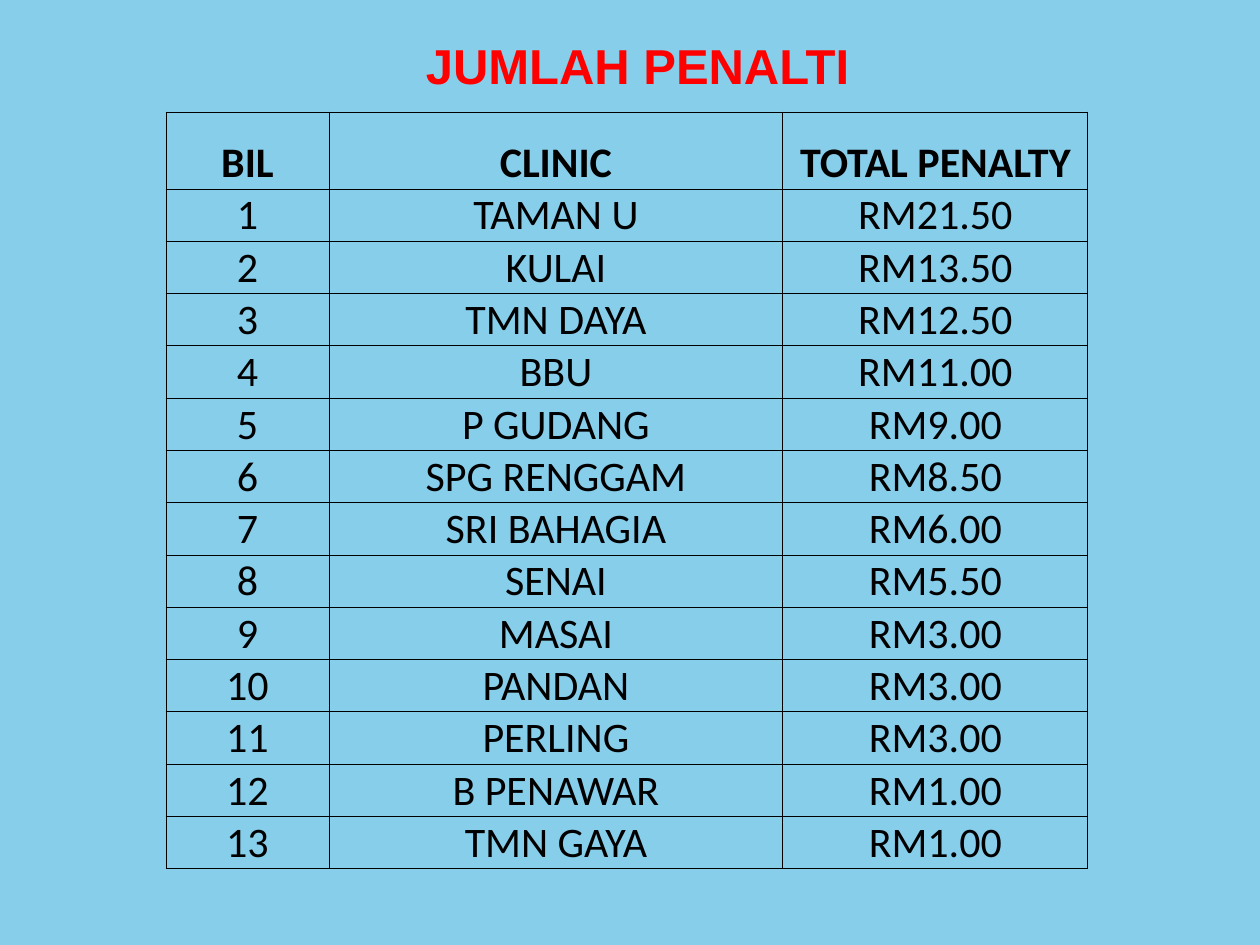
import pptx
import pptx.dml.color
import pptx.enum.text
import pptx.oxml
import pptx.oxml.ns
import pptx.util

PX = 914400 // 126
COLORS = {"sky": "87CEEB", "heading": "FF0000", "ink": "000000"}
HEADER = ("BIL", "CLINIC", "TOTAL PENALTY")
PENALTIES = (
    ("TAMAN U", "RM21.50"),
    ("KULAI", "RM13.50"),
    ("TMN DAYA", "RM12.50"),
    ("BBU", "RM11.00"),
    ("P GUDANG", "RM9.00"),
    ("SPG RENGGAM", "RM8.50"),
    ("SRI BAHAGIA", "RM6.00"),
    ("SENAI", "RM5.50"),
    ("MASAI", "RM3.00"),
    ("PANDAN", "RM3.00"),
    ("PERLING", "RM3.00"),
    ("B PENAWAR", "RM1.00"),
    ("TMN GAYA", "RM1.00"),
)
COLUMN_WIDTHS = (163, 454, 305)
HEADER_HEIGHT = 77


def px(length):
    """Convert px to EMU."""
    return pptx.util.Emu(length * PX)


def rgb(name):
    """Look up a named colour."""
    return pptx.dml.color.RGBColor.from_string(COLORS[name])


def format_text(frame, font_name, size, color, bold):
    """Centre the only paragraph of a frame and format its runs."""
    paragraph = frame.paragraphs[0]
    paragraph.alignment = pptx.enum.text.PP_ALIGN.CENTER
    for run in paragraph.runs:
        run.font.name = font_name
        run.font.size = pptx.util.Pt(size)
        run.font.bold = bold
        run.font.color.rgb = rgb(color)


def add_borders(cell):
    """Draw a thin line on each side of a cell."""
    properties = cell._tc.get_or_add_tcPr()
    for position, side in enumerate(("lnL", "lnR", "lnT", "lnB")):
        line = pptx.oxml.parse_xml(
            f'<a:{side} {pptx.oxml.ns.nsdecls("a")} w="{pptx.util.Pt(0.5)}">'
            f'<a:solidFill><a:srgbClr val="{COLORS["ink"]}"/></a:solidFill></a:{side}>'
        )
        properties.insert(position, line)


def fill_cell(cell, text, bold):
    """Write and format one table cell."""
    cell.text_frame.text = text
    format_text(cell.text_frame, "Calibri", 24, "ink", bold)
    cell.vertical_anchor = pptx.enum.text.MSO_ANCHOR.BOTTOM
    cell.margin_left = cell.margin_right = cell.margin_top = px(1)
    cell.margin_bottom = 0
    cell.fill.background()
    add_borders(cell)


def place_heading(slide, left, top, width, height):
    """Place the slide heading in the title placeholder."""
    heading = slide.shapes.title
    heading.left, heading.top = px(left), px(top)
    heading.width, heading.height = px(width), px(height)
    frame = heading.text_frame
    frame.text = "JUMLAH PENALTI"
    frame.vertical_anchor = pptx.enum.text.MSO_ANCHOR.TOP
    frame.margin_top = px(11)
    frame.margin_bottom = 0
    frame.auto_size = pptx.enum.text.MSO_AUTO_SIZE.NONE
    format_text(frame, "Arial", 28, "heading", True)


def place_penalty_table(slide, left, top, width, height):
    """Place the table of penalties by clinic."""
    rows = [HEADER] + [
        (str(number), clinic, total)
        for number, (clinic, total) in enumerate(PENALTIES, 1)
    ]
    table = slide.shapes.add_table(
        len(rows), len(HEADER), px(left), px(top), px(width), px(height)
    ).table
    table.horz_banding = False
    for column, column_width in zip(table.columns, COLUMN_WIDTHS):
        column.width = px(column_width)
    row_height = (height - HEADER_HEIGHT) // len(PENALTIES)
    for index, values in enumerate(rows):
        table.rows[index].height = px(row_height if index else HEADER_HEIGHT)
        for cell, value in zip(table.rows[index].cells, values):
            fill_cell(cell, value, index == 0)


def main():
    """Build and save the slide."""
    presentation = pptx.Presentation()
    presentation.slide_width, presentation.slide_height = px(1260), px(945)
    slide = presentation.slides.add_slide(presentation.slide_layouts[5])
    slide.background.fill.solid()
    slide.background.fill.fore_color.rgb = rgb("sky")
    place_heading(slide, 175, 24, 925, 69)
    place_penalty_table(slide, 166, 112, sum(COLUMN_WIDTHS), 753)
    presentation.save("out.pptx")


if __name__ == "__main__":
    main()
